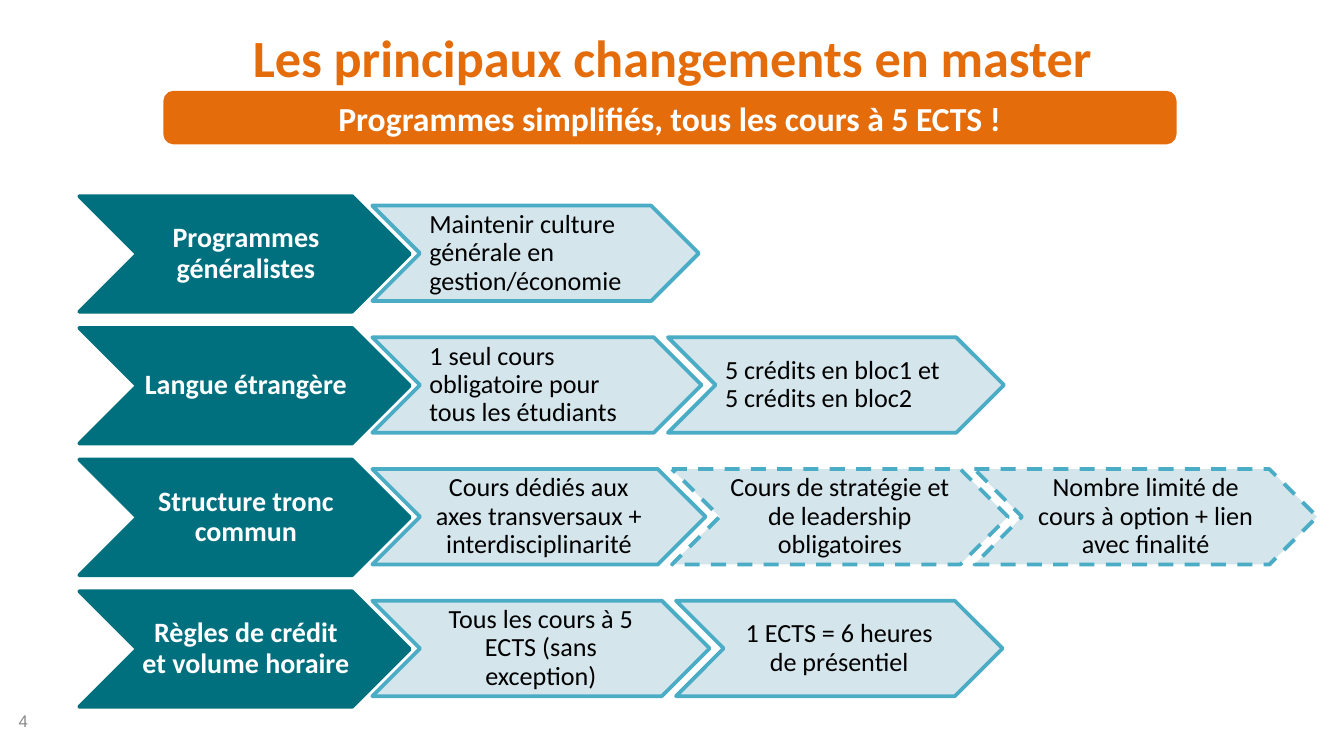
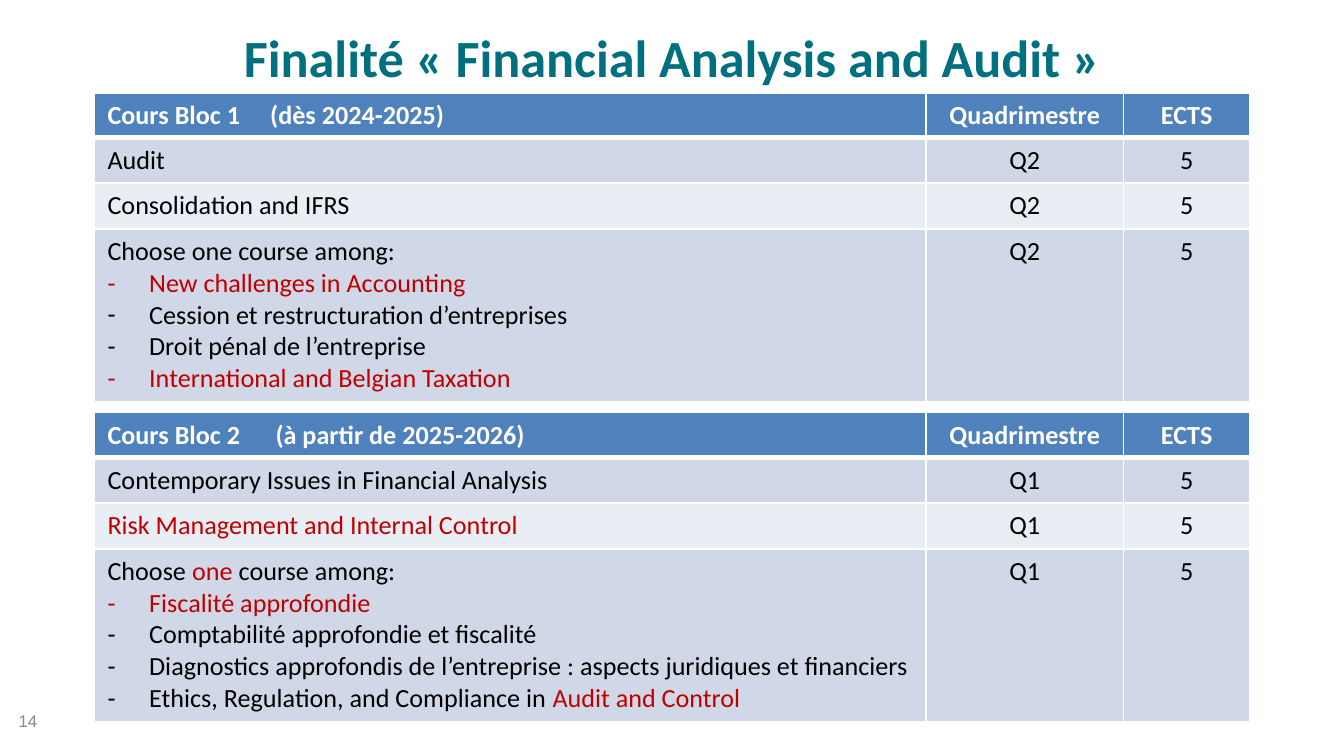
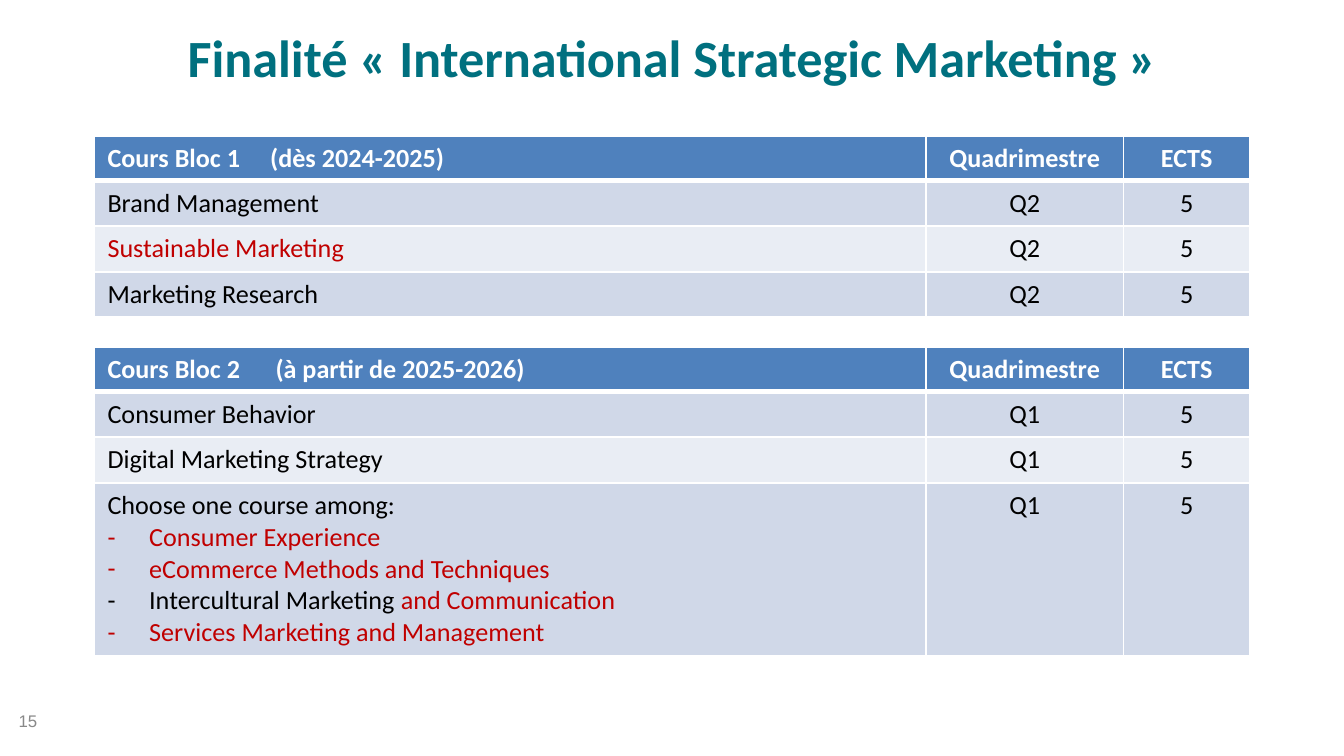
"""Build three slides on the changes to the master programmes."""
from lxml import etree
from pptx import Presentation
from pptx.dml.color import RGBColor
from pptx.enum import dml, shapes, text
from pptx.oxml import ns
from pptx.util import Inches, Pt

COLORS = {
    "orange": "E46C0A", "teal": "00707F", "aqua": "4BACC6", "pale": "D0E3EA",
    "header": "4F81BD", "band_dark": "D0D8E8", "band_light": "E9EDF4",
    "red": "C00000", "gray": "898989", "white": "FFFFFF", "black": "000000",
}
LEFT, CENTER = text.PP_ALIGN.LEFT, text.PP_ALIGN.CENTER
MIDDLE = text.MSO_ANCHOR.MIDDLE
CHEVRON = shapes.MSO_SHAPE.CHEVRON


def write_text(paragraph, content, size=14, color="black", bold=False, font="Calibri", align=LEFT, spacing=None):
    paragraph.alignment = align
    paragraph.line_spacing = spacing
    for index, part in enumerate(content.split("|")):
        if part:
            run = paragraph.add_run()
            run.text = part
            run.font.name, run.font.size, run.font.bold = font, Pt(size), bold
            run.font.color.rgb = RGBColor.from_string(COLORS["red" if index % 2 else color])


def add_box(slide, kind, box, fill, line, margins):
    shape = slide.shapes.add_shape(kind, *map(Inches, box))
    shape.shadow.inherit = False
    shape.fill.solid()
    shape.fill.fore_color.rgb = RGBColor.from_string(COLORS[fill])
    shape.line.color.rgb = RGBColor.from_string(COLORS[line])
    shape.line.width = Pt(2)
    frame = shape.text_frame
    frame.word_wrap = True
    frame.vertical_anchor = MIDDLE
    frame.margin_left, frame.margin_top, frame.margin_right, frame.margin_bottom = map(Inches, margins)
    return shape


presentation = Presentation()
presentation.slide_width = Inches(10)
presentation.slide_height = presentation.slide_width * 9 // 16

headings = [
    ("Les principaux changements en master", "orange", "4"),
    ("Finalité « Financial Analysis and Audit »", "teal", "14"),
    ("Finalité « International Strategic Marketing »", "teal", "15"),
]
slides = []
for heading, color, number in headings:
    slide = presentation.slides.add_slide(presentation.slide_layouts[5])
    title = slide.shapes.title
    title.left, title.top, title.width, title.height = map(Inches, (0.5, 0.14, 9, 0.62))
    title.text_frame.auto_size = text.MSO_AUTO_SIZE.NONE
    title.text_frame.vertical_anchor = text.MSO_ANCHOR.TOP
    write_text(title.text_frame.paragraphs[0], heading, size=28, color=color, bold=True, align=CENTER)
    page_number = slide.shapes.add_textbox(*map(Inches, (0.04, 5.21, 2.33, 0.3))).text_frame
    page_number.word_wrap = True
    page_number.vertical_anchor = MIDDLE
    write_text(page_number.paragraphs[0], number, size=9, color="gray", font="Arial")
    slides.append(slide)

changes = [
    ("Programmes généralistes", LEFT, [("Maintenir culture générale en gestion/économie", 2.43, False)]),
    ("Langue étrangère", LEFT, [
        ("1 seul cours obligatoire pour tous les étudiants", 2.45, False),
        ("5 crédits en bloc1 et 5 crédits en bloc2", 2.5, False),
    ]),
    ("Structure tronc commun", CENTER, [
        ("Cours dédiés aux axes transversaux + interdisciplinarité", 2.48, False),
        ("Cours de stratégie et de leadership obligatoires", 2.5, True),
        ("Nombre limité de cours à option + lien avec finalité", 2.55, True),
    ]),
    ("Règles de crédit et volume horaire", CENTER, [
        ("Tous les cours à 5 ECTS (sans exception)", 2.51, False),
        ("1 ECTS = 6 heures de présentiel", 2.43, False),
    ]),
]
for row, (theme, align, steps) in enumerate(changes):
    top = 1.46 + 0.98 * row
    shape = add_box(slides[0], CHEVRON, (0.59, top, 2.46, 0.86), "teal", "teal", (0.02, 0.01, 0, 0.01))
    write_text(shape.text_frame.paragraphs[0], theme, size=15, color="white", bold=True, align=CENTER, spacing=0.9)
    left = 2.77
    for step, width, dashed in steps:
        shape = add_box(slides[0], CHEVRON, (left, top + 0.07, width, 0.71), "pale", "aqua", [0.07] * 4)
        fill_color = shape.fill._xPr.find(ns.qn("a:solidFill"))[0]
        etree.SubElement(fill_color, ns.qn("a:alpha"), val="90000")
        if dashed:
            shape.line.dash_style = dml.MSO_LINE.DASH
        write_text(shape.text_frame.paragraphs[0], step, align=align, spacing=0.9)
        left += width - 0.25

banner = add_box(slides[0], shapes.MSO_SHAPE.ROUNDED_RECTANGLE, (1.23, 0.69, 7.51, 0.37),
                 "orange", "orange", [0.07] * 4)
write_text(banner.text_frame.paragraphs[0], "Programmes simplifiés, tous les cours à 5 ECTS !",
           size=18, color="white", bold=True, align=CENTER)

blocks = {
    "Q2": ("Cours Bloc 1\t(dès 2024-2025)", 1.21),
    "Q1": ("Cours Bloc 2\t(à partir de 2025-2026)", 1.25),
}
course_tables = [
    (slides[1], 0.69, "Q2", [
        ["Audit"],
        ["Consolidation and IFRS"],
        ["Choose one course among:", "|New challenges in Accounting", "Cession et restructuration d’entreprises",
         "Droit pénal de l’entreprise", "|International and Belgian Taxation"],
    ]),
    (slides[1], 3.07, "Q1", [
        ["Contemporary Issues in Financial Analysis"],
        ["|Risk Management and Internal Control"],
        ["Choose |one| course among:", "|Fiscalité approfondie", "Comptabilité approfondie et fiscalité",
         "Diagnostics approfondis de l’entreprise : aspects juridiques et financiers",
         "Ethics, Regulation, and Compliance in |Audit and Control"],
    ]),
    (slides[2], 1.01, "Q2", [["Brand Management"], ["|Sustainable Marketing"], ["Marketing Research"]]),
    (slides[2], 2.58, "Q1", [
        ["Consumer Behavior"],
        ["Digital Marketing Strategy"],
        ["Choose one course among:", "|Consumer Experience", "|eCommerce Methods and Techniques",
         "Intercultural Marketing |and Communication", "|Services Marketing and Management"],
    ]),
]
for slide, top, term, courses in course_tables:
    block, tab_position = blocks[term]
    rows = [([block], "Quadrimestre", "ECTS")] + [(course, term, "5") for course in courses]
    heights = [base + 0.24 * (len(row[0]) - 1) for base, row in zip((0.33, 0.34, 0.34, 0.33), rows)]
    table = slide.shapes.add_table(len(rows), 3, *map(Inches, (0.7, top, 8.6, sum(heights)))).table
    for column, width in zip(table.columns, (6.19, 1.47, 0.94)):
        column.width = Inches(width)
    for row, (lines, *details) in enumerate(rows):
        table.rows[row].height = Inches(heights[row])
        fill = "header" if row == 0 else "band_dark" if row % 2 else "band_light"
        for column, content in enumerate([lines] + [[detail] for detail in details]):
            cell = table.cell(row, column)
            cell.fill.solid()
            cell.fill.fore_color.rgb = RGBColor.from_string(COLORS[fill])
            properties = cell._tc.get_or_add_tcPr()
            for position, side in enumerate("LRTB"):
                thick = (row, side) in ((0, "B"), (1, "T"))
                border = etree.Element(ns.qn(f"a:ln{side}"), w=str(Pt(3 if thick else 1)))
                border_fill = etree.SubElement(border, ns.qn("a:solidFill"))
                etree.SubElement(border_fill, ns.qn("a:srgbClr"), val=COLORS["white"])
                properties.insert(position, border)
            for index, line in enumerate(content):
                frame = cell.text_frame
                paragraph = frame.add_paragraph() if index else frame.paragraphs[0]
                paragraph_properties = paragraph._p.get_or_add_pPr()
                if index:
                    paragraph_properties.set("marL", str(Inches(0.31)))
                    paragraph_properties.set("indent", str(-Inches(0.31)))
                    etree.SubElement(paragraph_properties, ns.qn("a:buFont"), typeface="Calibri")
                    etree.SubElement(paragraph_properties, ns.qn("a:buChar"), char="-")
                elif row == 0 and column == 0:
                    tabs = etree.SubElement(paragraph_properties, ns.qn("a:tabLst"))
                    etree.SubElement(tabs, ns.qn("a:tab"), pos=str(Inches(tab_position)), algn="l")
                write_text(paragraph, line, color="black" if row else "white", bold=row == 0,
                           align=CENTER if column else LEFT)

presentation.save("out.pptx")
